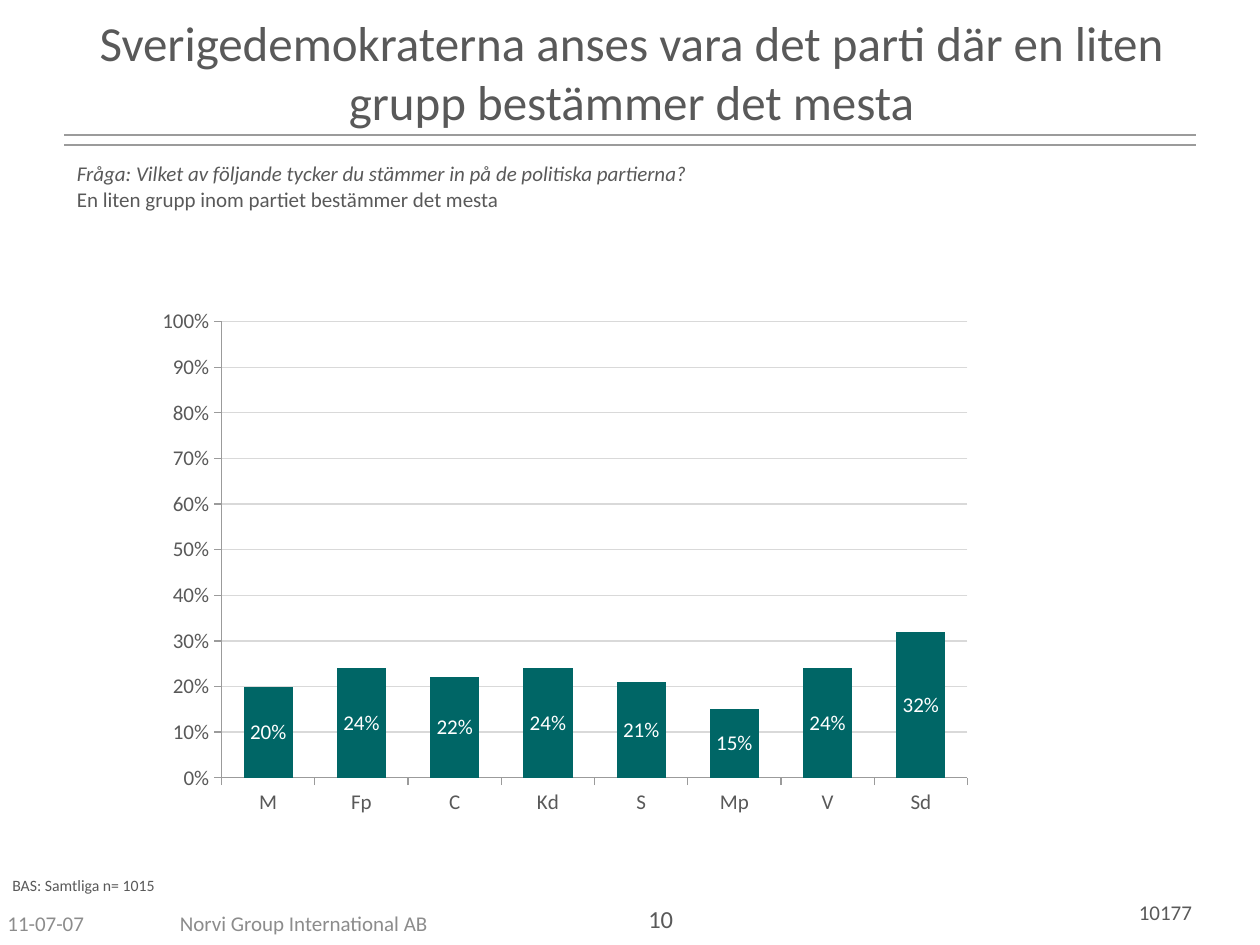
import pptx
import pptx.chart.data
import pptx.dml.color
import pptx.enum.chart
import pptx.enum.shapes
import pptx.enum.text
import pptx.oxml
import pptx.oxml.ns
import pptx.util
from dataclasses import dataclass
from lxml import etree

Cm = pptx.util.Cm
Align = pptx.enum.text.PP_ALIGN
Anchor = pptx.enum.text.MSO_ANCHOR


@dataclass(frozen=True)
class Theme:
    font: str = "Calibri"
    text: str = "595959"
    muted: str = "8C8C8C"
    rule: str = "9B9B9B"
    grid: str = "D9D9D9"
    bar: str = "006666"
    white: str = "FFFFFF"
    title_size: int = 28
    number_size: int = 14
    body_size: int = 12
    note_size: int = 9


theme = Theme()


def style_font(font, size, color):
    font.name = theme.font
    font.size = pptx.util.Pt(size)
    font.color.rgb = pptx.dml.color.RGBColor.from_string(color)


def add_text(page, place, text, size, color=theme.text, align=Align.LEFT, anchor=Anchor.TOP):
    """Add a wrapping text box and return its paragraph."""
    box = page.shapes.add_textbox(*[Cm(length) for length in place])
    box.text_frame.word_wrap = True
    box.text_frame.vertical_anchor = anchor
    para = box.text_frame.paragraphs[0]
    para.alignment = align
    style_font(para.font, size, color)
    if text:
        para.add_run().text = text
    return para


deck = pptx.Presentation()
deck.slide_width, deck.slide_height = Cm(25.4), Cm(19.05)
page = deck.slides.add_slide(deck.slide_layouts[6])

# Double rule under the title
for y in (2.72, 2.92):
    rule = page.shapes.add_connector(
        pptx.enum.shapes.MSO_CONNECTOR.STRAIGHT, Cm(1.3), Cm(y), Cm(24.1), Cm(y))
    rule.line.color.rgb = pptx.dml.color.RGBColor.from_string(theme.rule)
    rule.line.width = pptx.util.Pt(1.5)
    etree.SubElement(rule.element.spPr, pptx.oxml.ns.qn("a:effectLst"))

# Footer
add_text(page, (17.68, 18, 6.6, 0.76), "10177", theme.body_size, align=Align.RIGHT)
add_text(page, (-0.1, 18.1, 5.92, 1.02), "11-07-07", theme.body_size, theme.muted,
         anchor=Anchor.MIDDLE)
add_text(page, (2.1, 18.1, 8.05, 1.02), "Norvi Group International AB", theme.body_size,
         theme.muted, Align.CENTER, Anchor.MIDDLE)
add_text(page, (10.36, 18.1, 5.92, 1.02), "10", theme.number_size, align=Align.CENTER)

# Share per party
data = pptx.chart.data.CategoryChartData(number_format="0%")
data.categories = ["M", "Fp", "C", "Kd", "S", "Mp", "V", "Sd"]
data.add_series("Series 1", [0.2, 0.24, 0.22, 0.24, 0.21, 0.15, 0.24, 0.32])
chart = page.shapes.add_chart(
    pptx.enum.chart.XL_CHART_TYPE.COLUMN_STACKED,
    Cm(3.1), Cm(4.72), Cm(19.53), Cm(12.6), data).chart
chart.has_legend = False
chart.has_title = False
style_font(chart.font, theme.body_size, theme.text)

for axis in (chart.category_axis, chart.value_axis):
    axis.major_tick_mark = pptx.enum.chart.XL_TICK_MARK.OUTSIDE
    axis.format.line.color.rgb = pptx.dml.color.RGBColor.from_string(theme.rule)
    axis.format.line.width = pptx.util.Pt(0.75)
    style_font(axis.tick_labels.font, theme.body_size, theme.text)
shares = chart.value_axis
shares.minimum_scale, shares.maximum_scale, shares.major_unit = 0, 1, 0.1
shares.tick_labels.number_format = "0%"
shares.tick_labels.number_format_is_linked = False
shares.has_major_gridlines = True
grid = shares.major_gridlines.format.line
grid.color.rgb = pptx.dml.color.RGBColor.from_string(theme.grid)
grid.width = pptx.util.Pt(0.75)

plot = chart.plots[0]
plot.gap_width, plot.overlap, plot.vary_by_categories = 89, 100, False
bars = plot.series[0]
bars.format.fill.solid()
bars.format.fill.fore_color.rgb = pptx.dml.color.RGBColor.from_string(theme.bar)
labels = bars.data_labels
labels.show_value = True
labels.number_format = "0%"
labels.number_format_is_linked = False
labels.position = pptx.enum.chart.XL_LABEL_POSITION.CENTER
style_font(labels.font, theme.body_size, theme.white)

# Fixed inner plot area, as fractions of the chart
plot_area = plot._element.getparent()
for old_layout in plot_area.findall(pptx.oxml.ns.qn("c:layout")):
    plot_area.remove(old_layout)
plot_area.insert(0, pptx.oxml.parse_xml(
    f'<c:layout {pptx.oxml.ns.nsdecls("c")}><c:manualLayout>'
    '<c:layoutTarget val="inner"/><c:xMode val="edge"/><c:yMode val="edge"/>'
    '<c:x val="0.07"/><c:y val="0.14"/><c:w val="0.77"/><c:h val="0.73"/>'
    '</c:manualLayout></c:layout>'))

# Title, question and base
add_text(page, (1.3, 0.13, 22.86, 3.18),
         "Sverigedemokraterna anses vara det parti där en liten grupp bestämmer det mesta",
         theme.title_size, align=Align.CENTER)
question = add_text(page, (1.3, 3.12, 22.8, 1.8), "", theme.body_size)
span = question.add_run()
span.text = "Fråga: Vilket av följande tycker du stämmer in på de politiska partierna?"
span.font.italic = True
question.add_line_break()
question.add_run().text = "En liten grupp inom partiet bestämmer det mesta"
add_text(page, (0, 17.53, 8.6, 0.64), "BAS: Samtliga n= 1015", theme.note_size)

deck.save("out.pptx")
